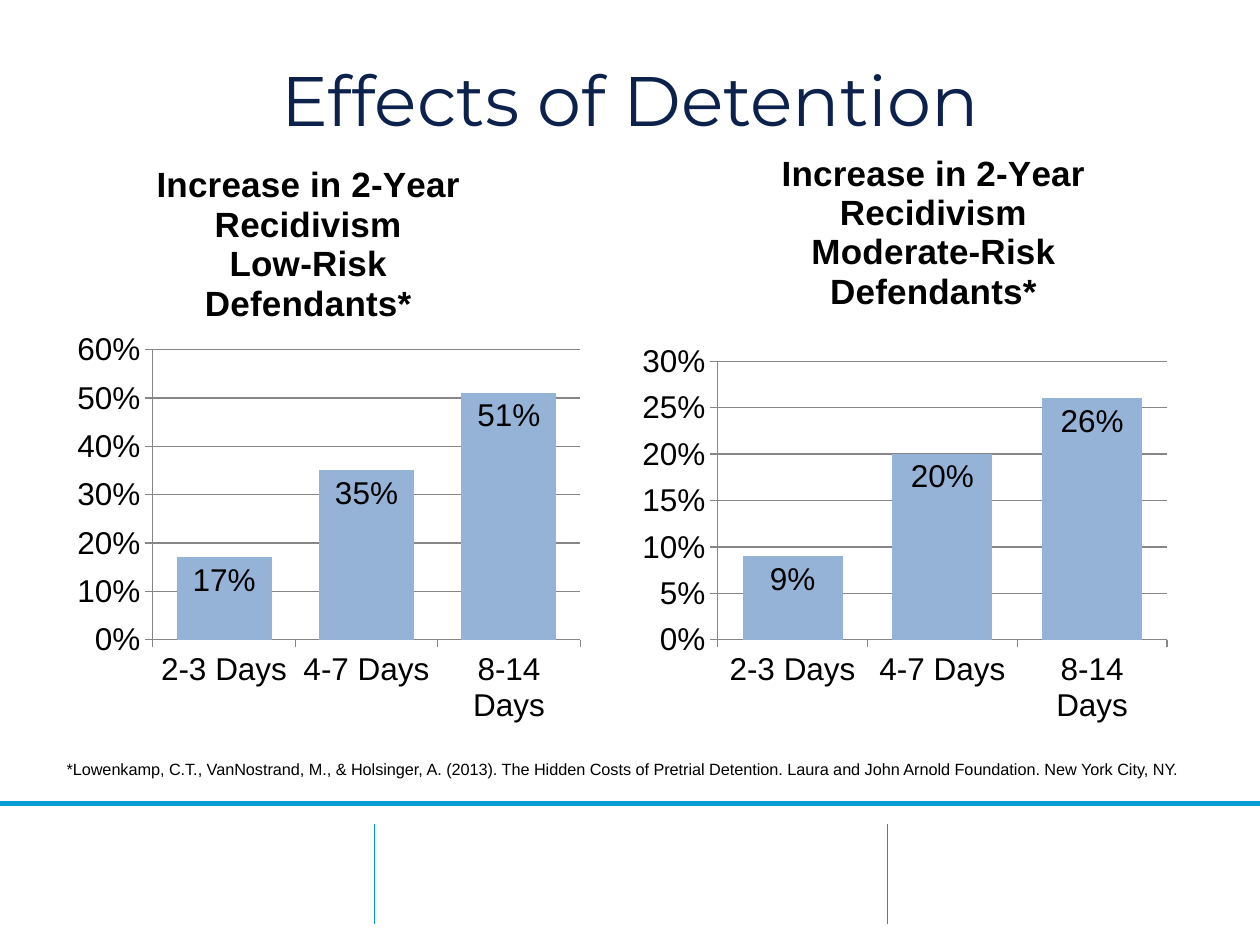
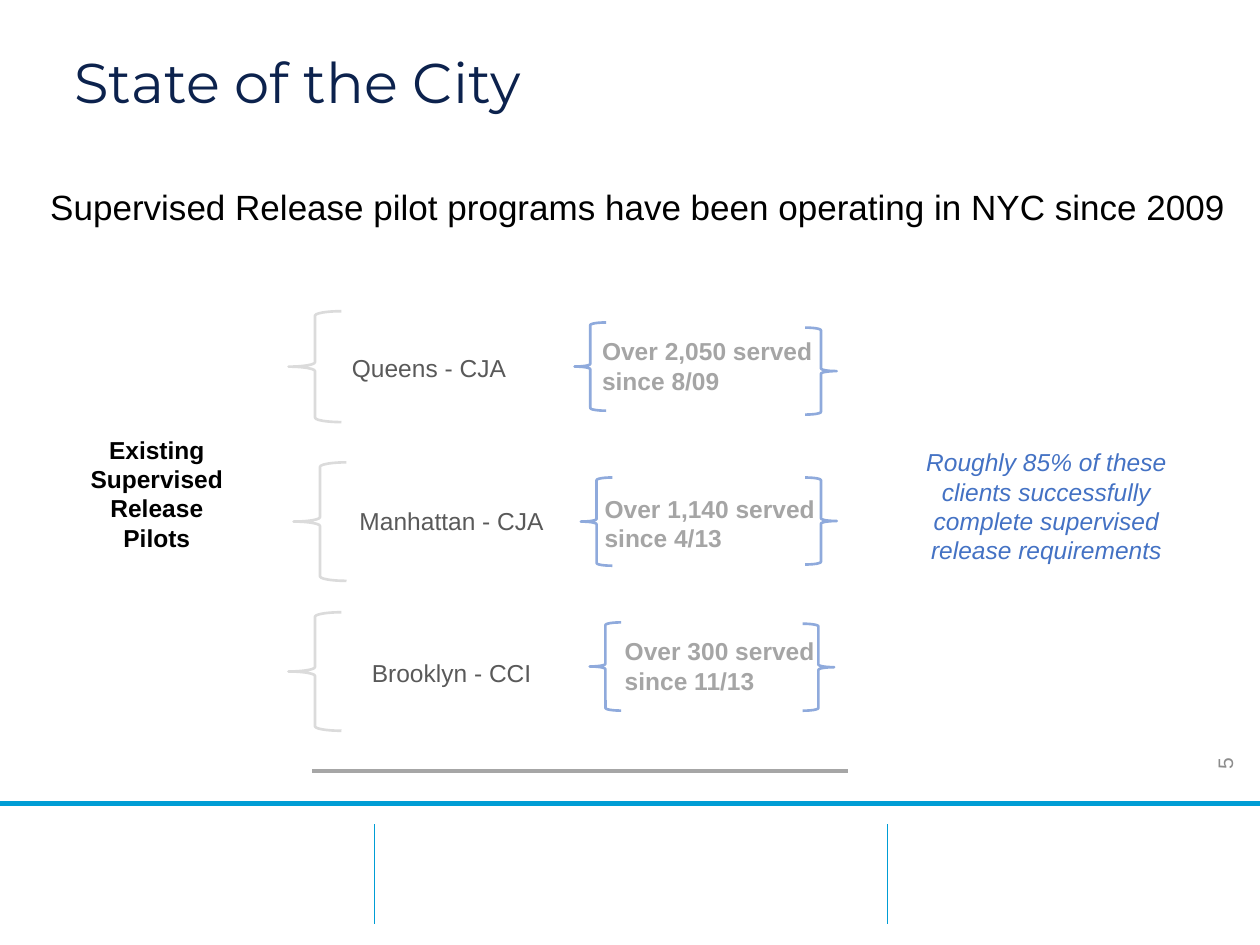
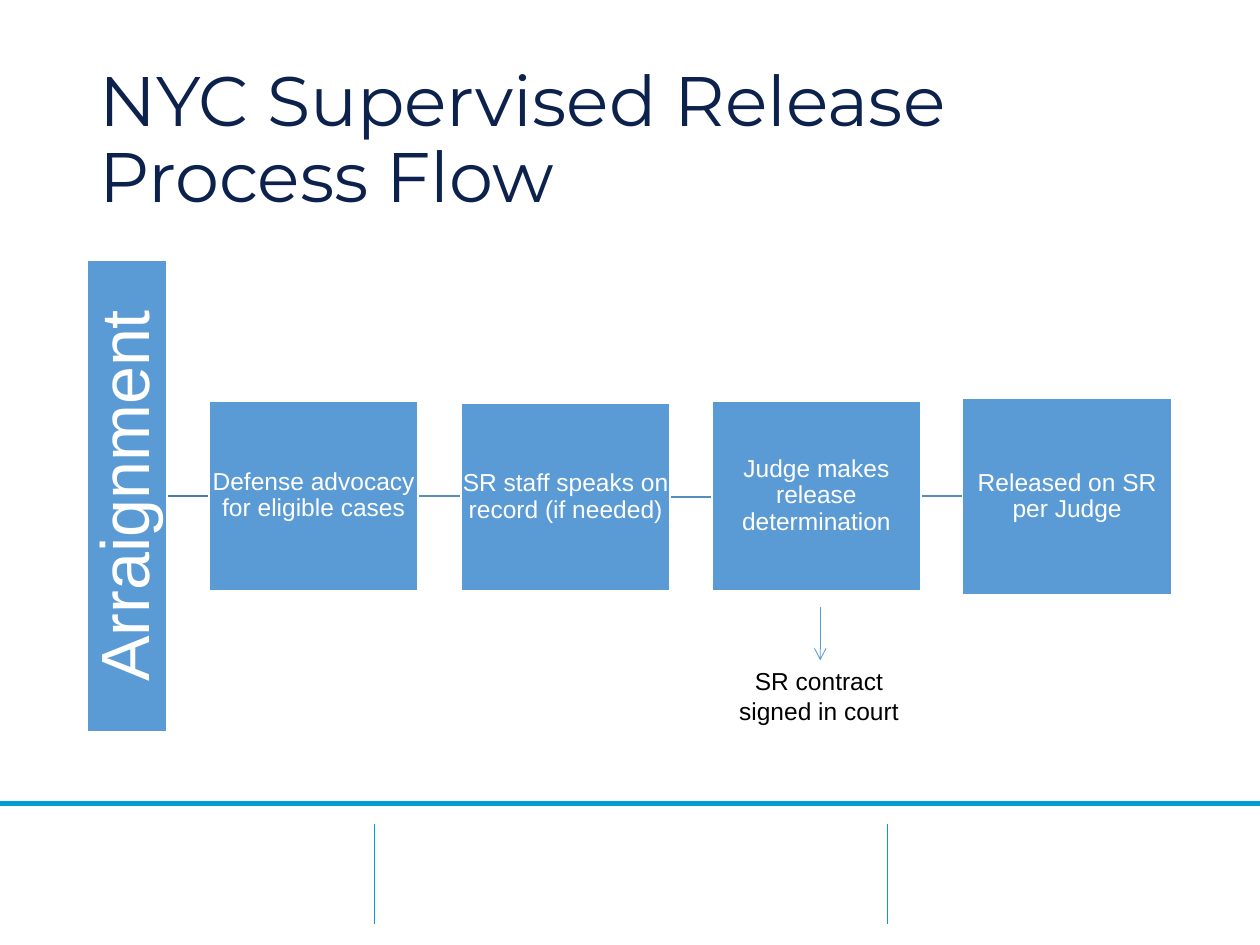
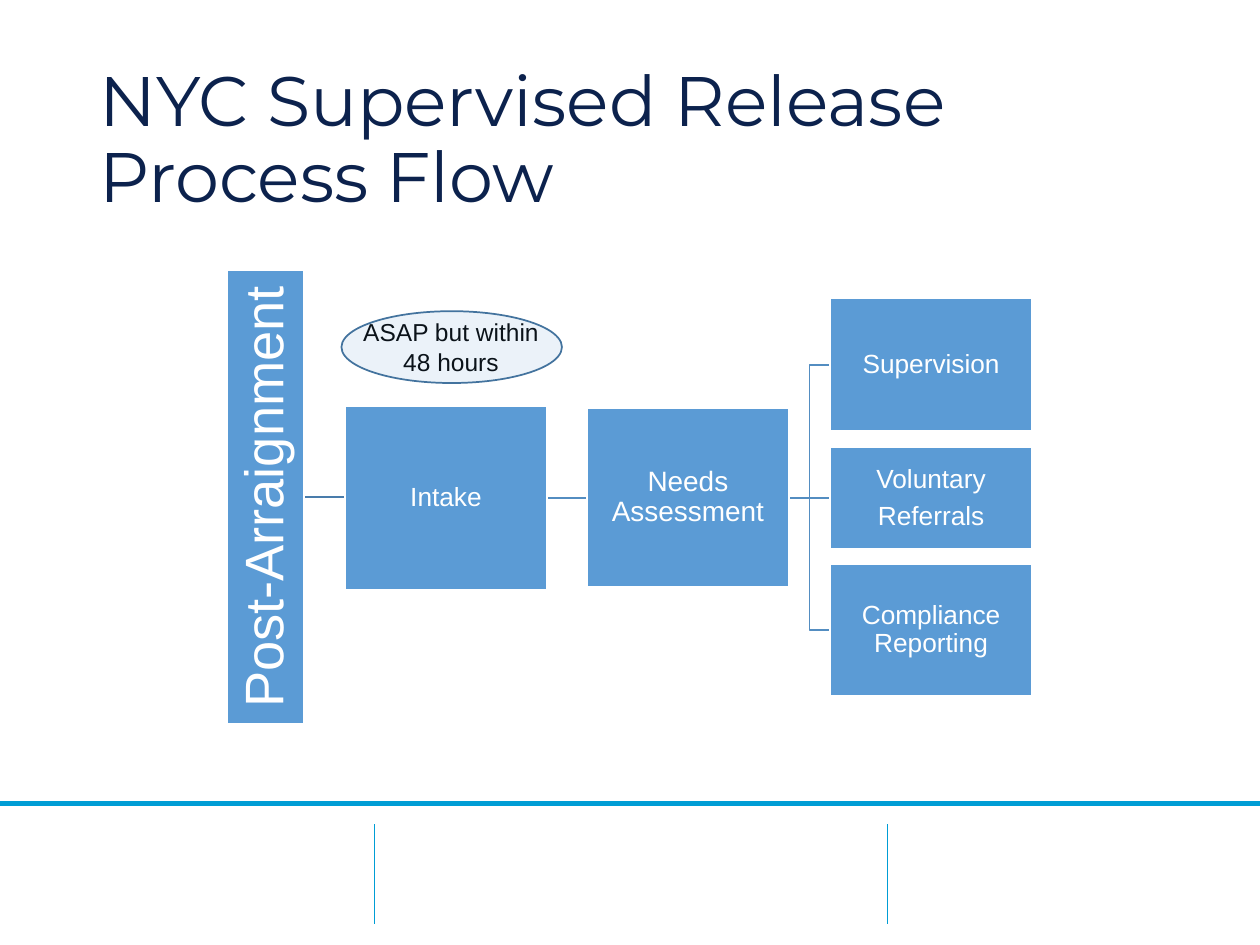
from lxml import etree
from pptx import Presentation
from pptx import util as u
from pptx.chart.data import CategoryChartData
from pptx.dml.color import RGBColor
from pptx.enum import chart as charts
from pptx.enum import shapes, text
from pptx.oxml import parse_xml
from pptx.oxml.ns import nsdecls, qn

PX = 9144
NAVY, CYAN, BLUE = "0C224D", "009DD5", "5B9BD5"
LINK, FIRST_LINK = "538DC1", "497CAB"
BLACK, WHITE = "000000", "FFFFFF"
SILVER, PERIWINKLE, AXIS = "DBDBDB", "8FAADC", "868686"


def px(*lengths):
    return [u.Emu(length * PX) for length in lengths]


def rgb(value):
    return RGBColor.from_string(value)


def write(frame, words, size=14, color=BLACK, face="Arial", bold=False, italic=False,
          align="LEFT", anchor="TOP", spacing=None, after=0, baseline=None, insets=(10, 5, 10, 5)):
    frame.word_wrap = True
    frame.vertical_anchor = getattr(text.MSO_ANCHOR, anchor)
    frame.margin_left, frame.margin_top, frame.margin_right, frame.margin_bottom = px(*insets)
    frame.text = words
    for paragraph in frame.paragraphs:
        paragraph.alignment = getattr(text.PP_ALIGN, align)
        paragraph.space_before, paragraph.space_after = u.Pt(0), u.Pt(after)
        if spacing:
            paragraph.line_spacing = spacing
        for run in paragraph.runs:
            font = run.font
            font.name, font.size = face, u.Pt(size)
            font.bold, font.italic = bold, italic
            font.color.rgb = rgb(color)
            if baseline:
                run._r.get_or_add_rPr().set("baseline", str(baseline * 1000))


class Deck:
    """Holds the shared style and the current slide, and draws each kind of element."""

    def __init__(self):
        self.prs = Presentation()
        self.prs.slide_width, self.prs.slide_height = px(1000, 750)
        self.slide = None

    def new_slide(self, title, at=(69, 40, 862, 145), **style):
        first = self.slide is None
        self.slide = self.prs.slides.add_slide(self.prs.slide_layouts[5])
        if first:
            self.footer()
        heading = self.slide.shapes.title
        heading.left, heading.top, heading.width, heading.height = px(*at)
        write(heading.text_frame, title, **{"size": 40, "color": NAVY, "face": "Montserrat",
                                            "anchor": "MIDDLE", "spacing": 0.9, **style})
        heading.text_frame.auto_size = text.MSO_AUTO_SIZE.NONE

    def footer(self):
        master_tree = self.prs.slide_master.element.cSld.spTree
        master_tree.append(self.line(0, 638, 1000, 638, CYAN, 3).element)
        for x in (297, 704):
            master_tree.append(self.line(x, 654, x, 733, CYAN, 0.5).element)

    def stroke(self, connector, color, weight):
        connector.line.color.rgb = rgb(color)
        connector.line.width = u.Pt(weight)
        etree.SubElement(connector.element.spPr, qn("a:effectLst"))

    def line(self, x1, y1, x2, y2, color, weight, arrow=False):
        connector = self.slide.shapes.add_connector(
            shapes.MSO_CONNECTOR.STRAIGHT, *px(x1, y1, x2, y2))
        self.stroke(connector, color, weight)
        if arrow:
            etree.SubElement(connector.line._get_or_add_ln(), qn("a:tailEnd"), type="arrow")
        return connector

    def link(self, start, end, color=LINK):
        turned = start.rotation != 0
        x1 = start.left + (start.width + (start.height if turned else start.width)) // 2
        y1, y2 = (box.top + box.height // 2 for box in (start, end))
        kind = shapes.MSO_CONNECTOR.ELBOW
        if abs(y1 - y2) < 3 * PX:
            kind, y2 = shapes.MSO_CONNECTOR.STRAIGHT, y1
        connector = self.slide.shapes.add_connector(kind, x1, y1, end.left, y2)
        connector.begin_connect(start, 2 if turned else 3)
        connector.end_connect(end, 1)
        connector.begin_x, connector.begin_y, connector.end_y = x1, y1, y2
        self.stroke(connector, color, 1)
        start.element.addprevious(connector.element)

    def text(self, at, words, rotation=0, grow=True, **style):
        box = self.slide.shapes.add_textbox(*px(*at))
        box.rotation = rotation
        write(box.text_frame, words, **style)
        if grow:
            box.text_frame.auto_size = text.MSO_AUTO_SIZE.SHAPE_TO_FIT_TEXT

    def shape(self, kind, at, line, weight=1, fill=None, alpha=None, rotation=0):
        figure = self.slide.shapes.add_shape(getattr(shapes.MSO_SHAPE, kind), *px(*at))
        figure.shadow.inherit = False
        figure.rotation = rotation
        figure.line.color.rgb = rgb(line)
        figure.line.width = u.Pt(weight)
        if fill:
            figure.fill.solid()
            figure.fill.fore_color.rgb = rgb(fill)
        else:
            figure.fill.background()
        if alpha:
            tint = figure.element.spPr.find(qn("a:solidFill"))[0]
            etree.SubElement(tint, qn("a:alpha"), val=str(alpha * 1000))
        return figure

    def step(self, at, words, size=14, rotation=0, inset=1, after=0):
        box = self.shape("RECTANGLE", at, WHITE, fill=BLUE, rotation=rotation)
        write(box.text_frame, words, size, WHITE, align="CENTER", anchor="MIDDLE",
              spacing=0.9, after=after, insets=(inset,) * 4)
        return box

    def brace(self, at, color, rotation=0):
        self.shape("LEFT_BRACE", at, color, 1.5, rotation=rotation)

    def place(self, parent, **fractions):
        for old in parent.findall(qn("c:layout")):
            parent.remove(old)
        target = '<c:layoutTarget val="inner"/>' if "w" in fractions else ""
        modes = '<c:xMode val="edge"/><c:yMode val="edge"/>'
        sizes = "".join(f'<c:{key} val="{value}"/>' for key, value in fractions.items())
        layout = parse_xml(f'<c:layout {nsdecls("c")}><c:manualLayout>{target}{modes}{sizes}'
                           '</c:manualLayout></c:layout>')
        caption = parent.find(qn("c:tx"))
        if caption is None:
            parent.insert(0, layout)
        else:
            caption.addnext(layout)

    def columns(self, at, title, values, top, unit, title_at, plot_at):
        data = CategoryChartData(number_format="0%")
        data.categories = ["2-3 Days", "4-7 Days", "8-14 Days"]
        data.add_series("Series 1", values)
        chart = self.slide.shapes.add_chart(
            charts.XL_CHART_TYPE.COLUMN_CLUSTERED, *px(*at), data).chart
        chart.font.name, chart.font.size = "Arial", u.Pt(18)
        chart.font.color.rgb = rgb(BLACK)
        chart.has_legend = False
        chart.has_title = True
        write(chart.chart_title.text_frame, title, 20, bold=True, align="CENTER")
        chart.chart_title.include_in_layout = False
        self.place(chart.element.chart.find(qn("c:title")), **title_at)
        self.place(chart.element.chart.plotArea, **plot_at)
        plot = chart.plots[0]
        plot.gap_width, plot.vary_by_categories = 50, False
        bars = plot.series[0].format.fill
        bars.solid()
        bars.fore_color.rgb = rgb("95B3D7")
        plot.has_data_labels = True
        labels = plot.data_labels
        labels.show_value = True
        labels.position = charts.XL_LABEL_POSITION.INSIDE_END
        labels.number_format, labels.number_format_is_linked = "0%", False
        scale = chart.value_axis
        scale.minimum_scale, scale.maximum_scale, scale.major_unit = 0, top, unit
        scale.tick_labels.number_format = "0%"
        scale.tick_labels.number_format_is_linked = False
        scale.has_major_gridlines = True
        scale.major_gridlines.format.line.color.rgb = rgb(AXIS)
        for axis in (scale, chart.category_axis):
            axis.major_tick_mark = charts.XL_TICK_MARK.OUTSIDE
            axis.format.line.color.rgb = rgb(AXIS)


def detention(deck):
    deck.new_slide("Effects of Detention", (69, 10, 862, 145), align="CENTER")
    deck.columns((43, 113, 435, 470), "Increase in 2-Year Recidivism\nLow-Risk\nDefendants*",
                 (0.17, 0.35, 0.51), 0.6, 0.1, {"x": 0.18, "y": 0.03},
                 {"x": 0.18, "y": 0.35, "w": 0.78, "h": 0.49})
    deck.text((43, 595, 935, 76),
              "*Lowenkamp, C.T., VanNostrand, M., & Holsinger, A. (2013). The Hidden Costs of "
              "Pretrial Detention. Laura and John Arnold Foundation. New York City, NY.",
              size=16, baseline=30)
    deck.columns((500, 113, 435, 470), "Increase in 2-Year Recidivism\nModerate-Risk Defendants*",
                 (0.09, 0.2, 0.26), 0.3, 0.05, {"x": 0.27, "y": 0.01},
                 {"x": 0.16, "y": 0.37, "w": 0.82, "h": 0.47})


def city(deck):
    deck.new_slide("State of the City", (49, 33, 928, 120), size=32, anchor="TOP",
                   insets=(10, 11, 10, 5))
    deck.text((900, 644, 144, 40), "5", rotation=270, grow=False, size=12, color="8C8C8C",
              align="RIGHT", anchor="MIDDLE")
    deck.text((30, 142, 962, 44),
              "Supervised Release pilot programs have been operating in NYC since 2009", size=20)
    deck.text((58, 340, 133, 104), "Existing Supervised Release Pilots", bold=True,
              align="CENTER")
    deck.text((719, 350, 223, 104),
              "Roughly 85% of these clients successfully complete supervised release requirements",
              color="4472C4", italic=True, align="CENTER")
    pilots = [
        ("Queens - CJA", (254, 275, 173, 34), (229, 247, 42, 88),
         "Over 2,050 served since 8/09", (468, 262, 190, 57), (456, 256), (639, 260)),
        ("Manhattan - CJA", (275, 397, 167, 34), (233, 367, 42, 94),
         "Over 1,140 served since 4/13", (470, 387, 202, 57), (461, 379), (639, 379)),
        ("Brooklyn - CCI", (275, 517, 167, 34), (229, 486, 42, 94),
         "Over 300 served since 11/13", (486, 500, 178, 57), (468, 494), (637, 495)),
    ]
    for borough, borough_at, brace_at, served, served_at, opening, closing in pilots:
        deck.text(borough_at, borough, color="595959", align="CENTER")
        deck.brace(brace_at, SILVER)
        deck.text(served_at, served, color="A5A5A5", bold=True)
        deck.brace((*opening, 25, 70), PERIWINKLE)
        deck.brace((*closing, 25, 69), PERIWINKLE, rotation=180)
    deck.line(248, 612, 673, 612, "A6A6A6", 2.25)


def arraignment(deck):
    deck.new_slide("NYC Supervised Release Process Flow")
    previous = deck.step((-86, 362, 374, 63), "Arraignment", 39, rotation=270, inset=3)
    steps = [("Defense advocacy for eligible cases", 151),
             ("SR staff speaks on record (if needed)", 149),
             ("Judge makes release determination", 151),
             ("Released on SR per Judge", 156)]
    for column, (words, height) in enumerate(steps):
        box = deck.step((166 + round(199.5 * column), 394 - round(height / 2), 166, height), words)
        deck.link(previous, box, LINK if column else FIRST_LINK)
        previous = box
    deck.text((572, 524, 156, 57), "SR contract signed in court", align="CENTER")
    deck.line(651, 482, 651, 524, BLUE, 0.5, arrow=True)


def post_arraignment(deck):
    deck.new_slide("NYC Supervised Release Process Flow")
    spine = deck.step((31, 364, 360, 61), "Post-Arraignment", 31, rotation=270, inset=2)
    intake = deck.step((274, 322, 160, 146), "Intake", 15)
    needs = deck.step((466, 324, 160, 142), "Needs Assessment", 16)
    deck.link(spine, intake, FIRST_LINK)
    deck.link(intake, needs)
    for words, top, height in (("Supervision", 237, 105), ("Voluntary\nReferrals", 355, 81),
                               ("Compliance Reporting", 448, 104)):
        deck.link(needs, deck.step((659, top, 160, height), words, 15, after=5))
    deck.text((276, 247, 164, 57), "ASAP but within 48 hours", align="CENTER")
    deck.shape("OVAL", (271, 247, 175, 57), "43739E", fill=BLUE, alpha=12)


def main():
    deck = Deck()
    for build in (detention, city, arraignment, post_arraignment):
        build(deck)
    deck.prs.save("out.pptx")


if __name__ == "__main__":
    main()
